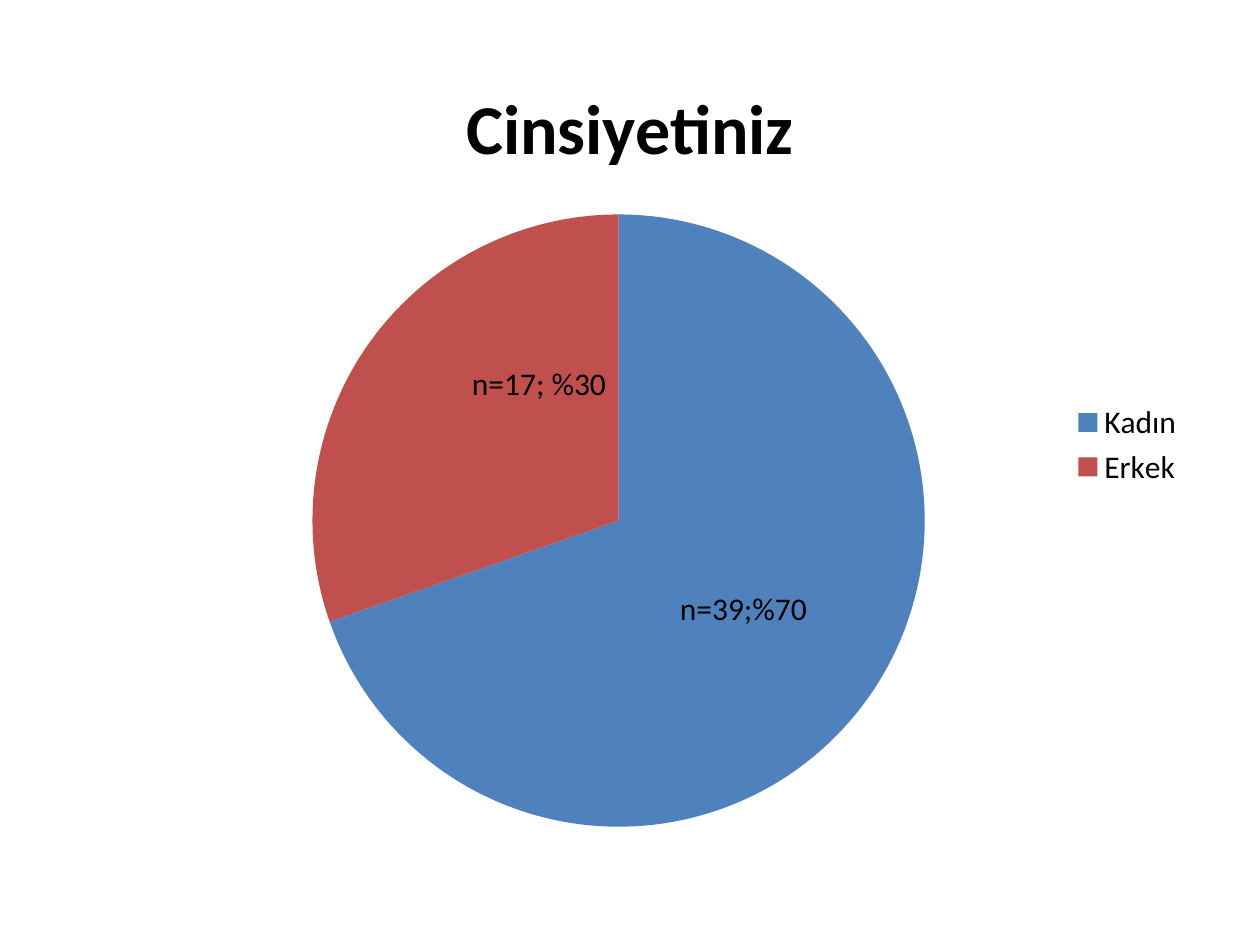
from lxml import etree
from pptx import Presentation
from pptx.chart.data import CategoryChartData
from pptx.dml.color import RGBColor
from pptx.enum.chart import XL_CHART_TYPE, XL_LABEL_POSITION, XL_LEGEND_POSITION
from pptx.oxml.ns import qn
from pptx.util import Inches, Pt

PIE = XL_CHART_TYPE.PIE
CENTER = XL_LABEL_POSITION.CENTER
RIGHT = XL_LEGEND_POSITION.RIGHT
BLANK_LAYOUT = 6

COLORS = {"text": "000000", "Kadın": "4F81BD", "Erkek": "C0504D"}
COUNTS = {"Kadın": 39, "Erkek": 17}
LABELS = ["n=39;%70", "n=17; %30"]
TITLE_FORMAT = {"name": "Calibri", "size": Pt(40), "bold": True}
BODY_FORMAT = {"name": "Calibri", "size": Pt(18), "bold": False}


def format_font(font, values):
    for name, value in values.items():
        setattr(font, name, value)
    font.color.rgb = RGBColor.from_string(COLORS["text"])


def set_layout(parent, index, values):
    """Give a chart part a manual layout, as fractions of the chart."""
    for old in parent.findall(qn("c:layout")):
        parent.remove(old)
    layout = etree.Element(qn("c:layout"))
    manual = etree.SubElement(layout, qn("c:manualLayout"))
    for tag, value in values.items():
        etree.SubElement(manual, qn(f"c:{tag}")).set("val", str(value))
    parent.insert(index, layout)


def add_gender_pie(slide, left, top, width, height):
    data = CategoryChartData()
    data.categories = list(COUNTS)
    data.add_series("Series 1", list(COUNTS.values()))
    chart = slide.shapes.add_chart(PIE, left, top, width, height, data).chart
    format_font(chart.font, BODY_FORMAT)

    # Title and legend
    chart.has_title = True
    title = chart.chart_title
    title.include_in_layout = False
    title.text_frame.text = "Cinsiyetiniz"
    format_font(title.text_frame.paragraphs[0].runs[0].font, TITLE_FORMAT)
    chart.has_legend = True
    chart.legend.position = RIGHT
    chart.legend.include_in_layout = False
    format_font(chart.legend.font, BODY_FORMAT)

    # Slices with their labels
    plot = chart.plots[0]
    plot.vary_by_categories = True
    series = plot.series[0]
    labels = series.data_labels
    labels.show_value = True
    labels.show_percentage = True
    labels.position = CENTER
    format_font(labels.font, BODY_FORMAT)
    for index, (category, text) in enumerate(zip(COUNTS, LABELS)):
        point = series.points[index]
        point.format.fill.solid()
        point.format.fill.fore_color.rgb = RGBColor.from_string(COLORS[category])
        label = point.data_label
        label.text_frame.text = text
        format_font(label.text_frame.paragraphs[0].runs[0].font, BODY_FORMAT)
        label.position = CENTER

    # Pie area, and the smaller slice's label moved up and right
    plot_area = chart.element.find(".//" + qn("c:plotArea"))
    set_layout(plot_area, 0, {"layoutTarget": "inner", "xMode": "edge", "yMode": "edge",
                              "x": 0.22, "y": 0.21, "w": 0.54, "h": 0.77})
    small_label = plot_area.findall(".//" + qn("c:dLbl"))[1]
    set_layout(small_label, 1, {"x": 0.04, "y": -0.06})


def main():
    presentation = Presentation()
    presentation.slide_width = Inches(10)
    presentation.slide_height = Inches(7.5)
    slide = presentation.slides.add_slide(presentation.slide_layouts[BLANK_LAYOUT])
    add_gender_pie(slide, Inches(0.5), Inches(0.36), Inches(9), Inches(6.34))
    presentation.save("out.pptx")


if __name__ == "__main__":
    main()
